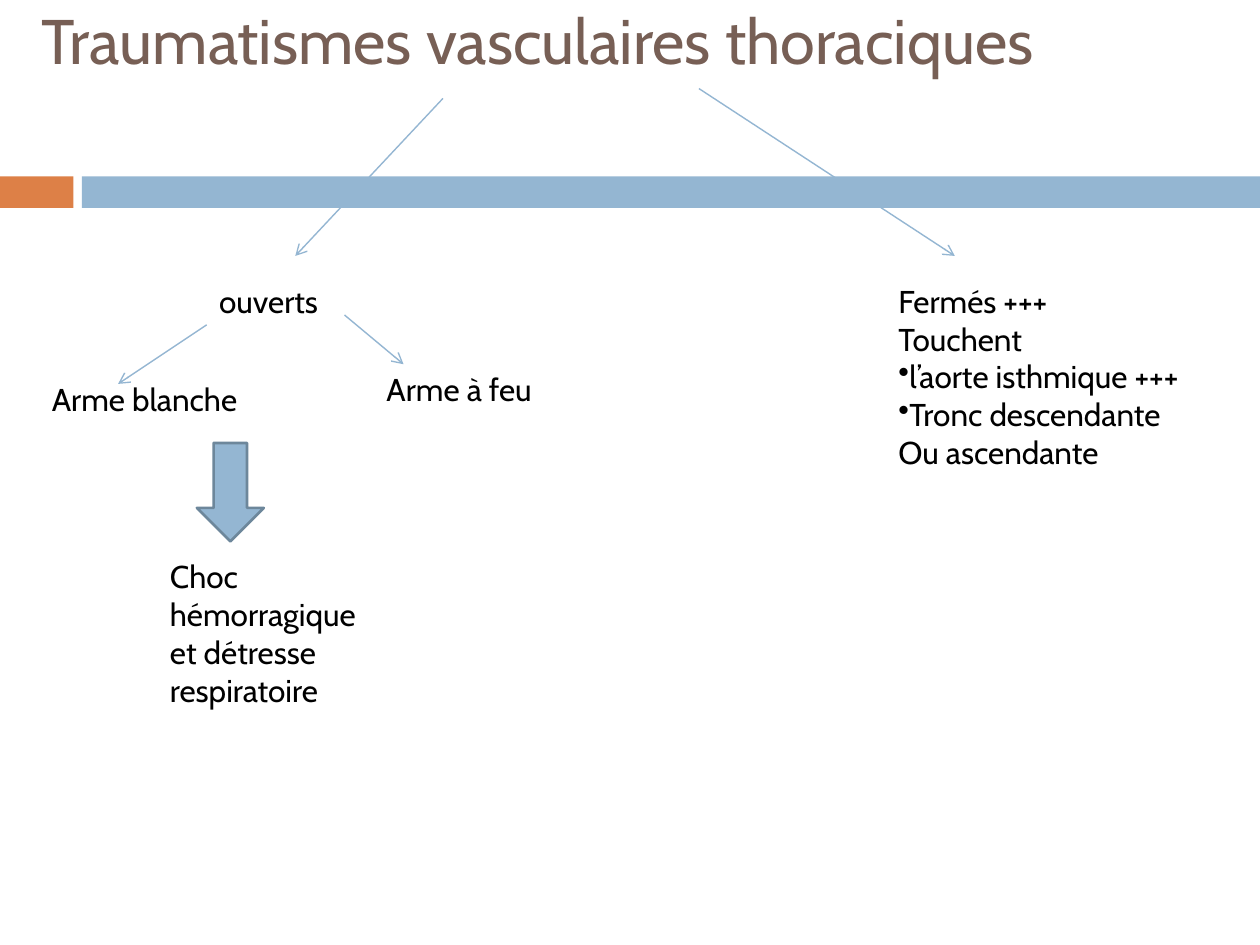
from pptx import Presentation
from pptx.dml.color import RGBColor
from pptx.enum.shapes import MSO_CONNECTOR, MSO_SHAPE
from pptx.enum.text import MSO_ANCHOR, MSO_AUTO_SIZE
from pptx.oxml.ns import qn
from pptx.util import Inches, Pt
from lxml.etree import SubElement

COLUMNS = 128
CELL = Inches(10) / COLUMNS
FONT = "Cabin"
BLUE = RGBColor(0x94, 0xB6, 0xD2)
DARK_BLUE = RGBColor(0x6D, 0x87, 0x9B)
ORANGE = RGBColor(0xDD, 0x80, 0x47)
BROWN = RGBColor(0x77, 0x5F, 0x55)
BLACK = RGBColor(0, 0, 0)
BULLET = "•"


def cells(*counts):
    return [round(count * CELL) for count in counts]


def add_block(slide, preset, area, fill, outline=None):
    block = slide.shapes.add_shape(preset, *cells(*area))
    block.shadow.inherit = False
    block.fill.solid()
    block.fill.fore_color.rgb = fill
    if outline is None:
        block.line.fill.background()
    else:
        block.line.color.rgb = outline
        block.line.width = Pt(1.5)


def add_bullet(paragraph):
    properties = paragraph._p.get_or_add_pPr()
    properties.set("marL", "0")
    properties.set("indent", "0")
    SubElement(properties, qn("a:buChar"), char=BULLET)


def add_text(slide, area, lines, size=18, color=BLACK):
    frame = slide.shapes.add_textbox(*cells(*area)).text_frame
    frame.word_wrap = True
    for index, line in enumerate(lines):
        paragraph = frame.add_paragraph() if index else frame.paragraphs[0]
        paragraph.text = line.removeprefix(BULLET)
        if line.startswith(BULLET):
            add_bullet(paragraph)
        paragraph.font.name = FONT
        paragraph.font.size = Pt(size)
        paragraph.font.color.rgb = color
    return frame


def add_label(slide, area, *lines):
    add_text(slide, area, lines).auto_size = MSO_AUTO_SIZE.SHAPE_TO_FIT_TEXT


def add_title(slide, area, title):
    frame = add_text(slide, area, [title], 36, BROWN)
    frame.vertical_anchor = MSO_ANCHOR.MIDDLE


def add_branch(slide, start, end):
    branch = slide.shapes.add_connector(MSO_CONNECTOR.STRAIGHT, *cells(*start, *end))
    branch.line.color.rgb = BLUE
    branch.line.width = Pt(0.79)
    SubElement(branch.line._get_or_add_ln(), qn("a:tailEnd"), type="arrow")
    SubElement(branch._element.spPr, qn("a:effectLst"))


def main():
    presentation = Presentation()
    presentation.slide_width = Inches(10)
    presentation.slide_height = Inches(7.5)
    slide = presentation.slides.add_slide(presentation.slide_layouts[6])

    band_top, band_height, band_left = 17.92, 3.2, 8.32
    add_block(slide, MSO_SHAPE.RECTANGLE, (0, band_top, 7.47, band_height), ORANGE)
    add_block(slide, MSO_SHAPE.RECTANGLE,
              (band_left, band_top, COLUMNS - band_left, band_height), BLUE)
    add_title(slide, (3, -4, 121, 16), "Traumatismes vasculaires thoraciques")

    add_label(slide, (21, 28, 13.2, 5.1), "ouverts")
    add_label(slide, (90, 28, 33.8, 20.7), "Fermés +++", "Touchent",
              "•l’aorte isthmique +++", "•Tronc descendante", "Ou ascendante")
    add_label(slide, (4, 38, 22.5, 5.1), "Arme blanche")
    add_label(slide, (38, 37, 18.4, 5.1), "Arme à feu")

    for start, end in (
        ((45, 10), (30, 26)),
        ((71, 9), (97, 26)),
        ((21, 33), (12, 39)),
        ((35, 32), (41, 37)),
    ):
        add_branch(slide, start, end)

    add_block(slide, MSO_SHAPE.DOWN_ARROW, (20, 45, 6.8, 10), BLUE, DARK_BLUE)
    add_label(slide, (16, 56, 28.5, 12.9),
              "Choc hémorragique", "et détresse", "respiratoire")

    presentation.save("out.pptx")


if __name__ == "__main__":
    main()
